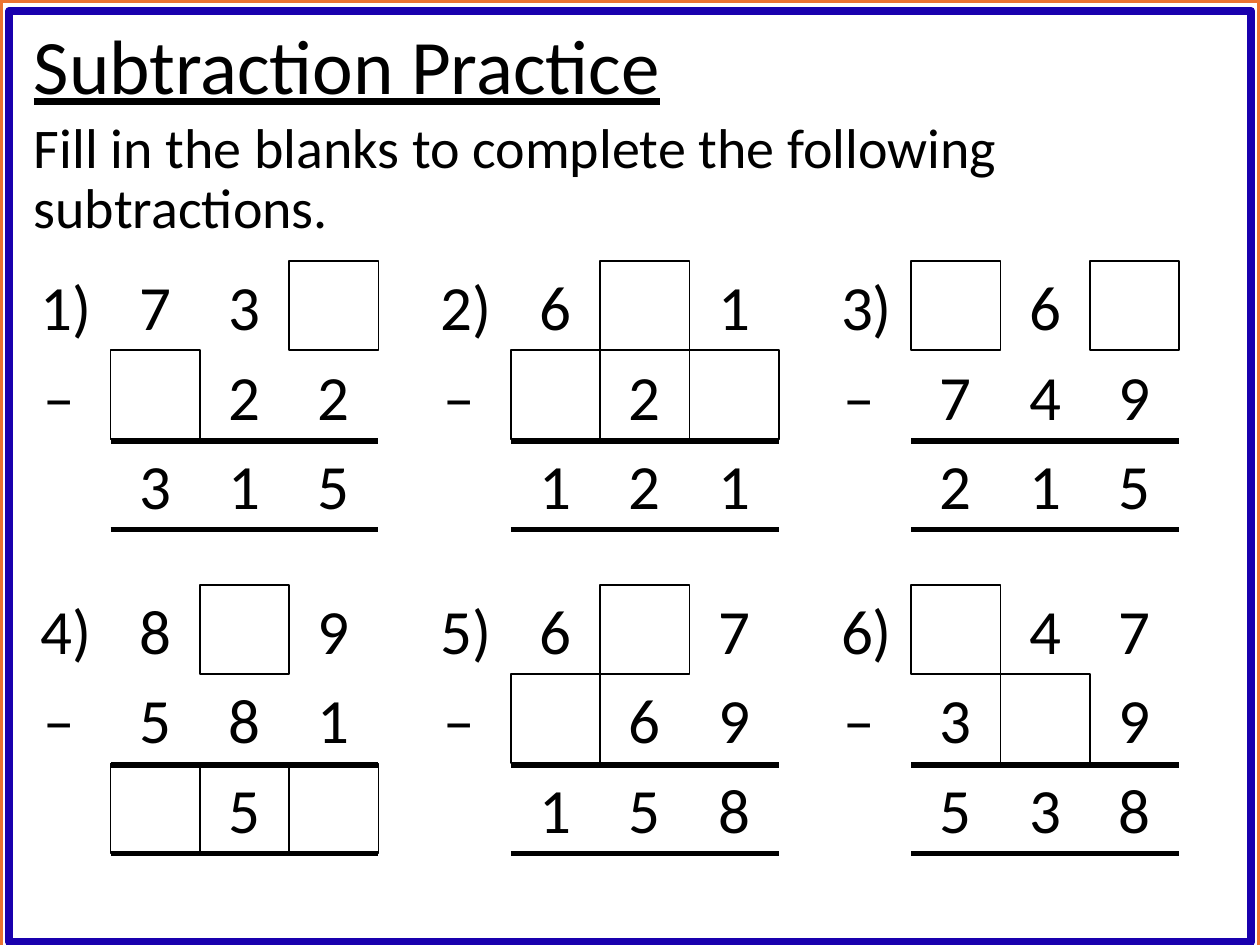
"""Build a subtraction practice slide with six column problems to complete."""
from lxml.etree import SubElement
from pptx import Presentation
from pptx.dml.color import RGBColor
from pptx.enum.shapes import MSO_CONNECTOR, MSO_SHAPE
from pptx.enum.text import MSO_ANCHOR, PP_ALIGN
from pptx.oxml.ns import qn
from pptx.util import Cm, Pt

BLACK = RGBColor(0x00, 0x00, 0x00)
WHITE = RGBColor(0xFF, 0xFF, 0xFF)
ORANGE = RGBColor(0xEB, 0x73, 0x31)
BLUE = RGBColor(0x19, 0x00, 0xAE)
FONT = "Calibri"

TITLE = "Subtraction Practice"
INSTRUCTION = "Fill in the blanks to complete the following subtractions."
BLANK = "_"
PROBLEMS = [
    ("73_", "_22", "315"),
    ("6_1", "_2_", "121"),
    ("_6_", "749", "215"),
    ("8_9", "581", "_5_"),
    ("6_7", "_69", "158"),
    ("_47", "3_9", "538"),
]
FRAMES = [
    (0, 0, 25.4, 19.22, ORANGE, 3),
    (0.19, 0.22, 25.03, 18.78, BLUE, 4.5),
]

CELL = 1.8
PROBLEMS_PER_ROW = 3
GRID_LEFT, GRID_TOP = 0.43, 5.26
COLUMN_STEP, ROW_STEP = 8.07, 6.53
RULE_OFFSETS = (3.63, 5.41)


def add_rectangle(shapes, left, top, width, height, fill=None, line=None, line_width=1):
    shape = shapes.add_shape(MSO_SHAPE.RECTANGLE, Cm(left), Cm(top), Cm(width), Cm(height))
    shape.shadow.inherit = False
    if fill is None:
        shape.fill.background()
    else:
        shape.fill.solid()
        shape.fill.fore_color.rgb = fill
    if line is None:
        shape.line.fill.background()
    else:
        shape.line.color.rgb = line
        shape.line.width = Pt(line_width)
    return shape


def write_text(shape, text, size):
    frame = shape.text_frame
    frame.word_wrap = True
    frame.vertical_anchor = MSO_ANCHOR.MIDDLE
    paragraph = frame.paragraphs[0]
    paragraph.text = text
    paragraph.font.name = FONT
    paragraph.font.size = Pt(size)
    paragraph.font.color.rgb = BLACK
    return paragraph


def add_heading(shapes, top, text, size):
    box = shapes.add_textbox(Cm(0.43), Cm(top), Cm(21.9), Cm(1.93))
    paragraph = write_text(box, text, size)
    paragraph.line_spacing = 0.9
    return paragraph


def add_symbol(shapes, left, top, text):
    cell = add_rectangle(shapes, left, top, CELL, CELL, fill=WHITE)
    write_text(cell, text, 36).alignment = PP_ALIGN.CENTER


def add_rule(shapes, left, top):
    rule = shapes.add_connector(
        MSO_CONNECTOR.STRAIGHT, Cm(left), Cm(top), Cm(left + 3 * CELL), Cm(top)
    )
    rule.line.color.rgb = BLACK
    rule.line.width = Pt(3)
    SubElement(rule.line._get_or_add_ln().getparent(), qn("a:effectLst"))


def add_problem(slide, index, rows):
    row_number, column_number = divmod(index, PROBLEMS_PER_ROW)
    left = GRID_LEFT + column_number * COLUMN_STEP
    top = GRID_TOP + row_number * ROW_STEP
    digits_left = left + CELL
    shapes = slide.shapes.add_group_shape().shapes

    add_symbol(shapes, left, top, f"{index + 1})")
    add_symbol(shapes, left, top + CELL, "– ")
    blanks = []
    for row, digits in enumerate(rows):
        for column, digit in enumerate(digits):
            position = (digits_left + column * CELL, top + row * CELL)
            if digit == BLANK:
                blanks.append(position)
            else:
                add_symbol(shapes, *position, digit)
    for position in blanks:
        add_rectangle(shapes, *position, CELL, CELL, fill=WHITE, line=BLACK)
    for offset in RULE_OFFSETS:
        add_rule(shapes, digits_left, top + offset)


def main():
    presentation = Presentation()
    presentation.slide_width = Cm(25.4)
    presentation.slide_height = Cm(19.05)
    slide = presentation.slides.add_slide(presentation.slide_layouts[6])

    for left, top, width, height, color, line_width in FRAMES:
        add_rectangle(slide.shapes, left, top, width, height, line=color, line_width=line_width)
    add_heading(slide.shapes, 0.43, TITLE, 44).font.underline = True
    for index, rows in enumerate(PROBLEMS):
        add_problem(slide, index, rows)
    add_heading(slide.shapes, 2.67, INSTRUCTION, 32)
    presentation.save("out.pptx")


if __name__ == "__main__":
    main()
